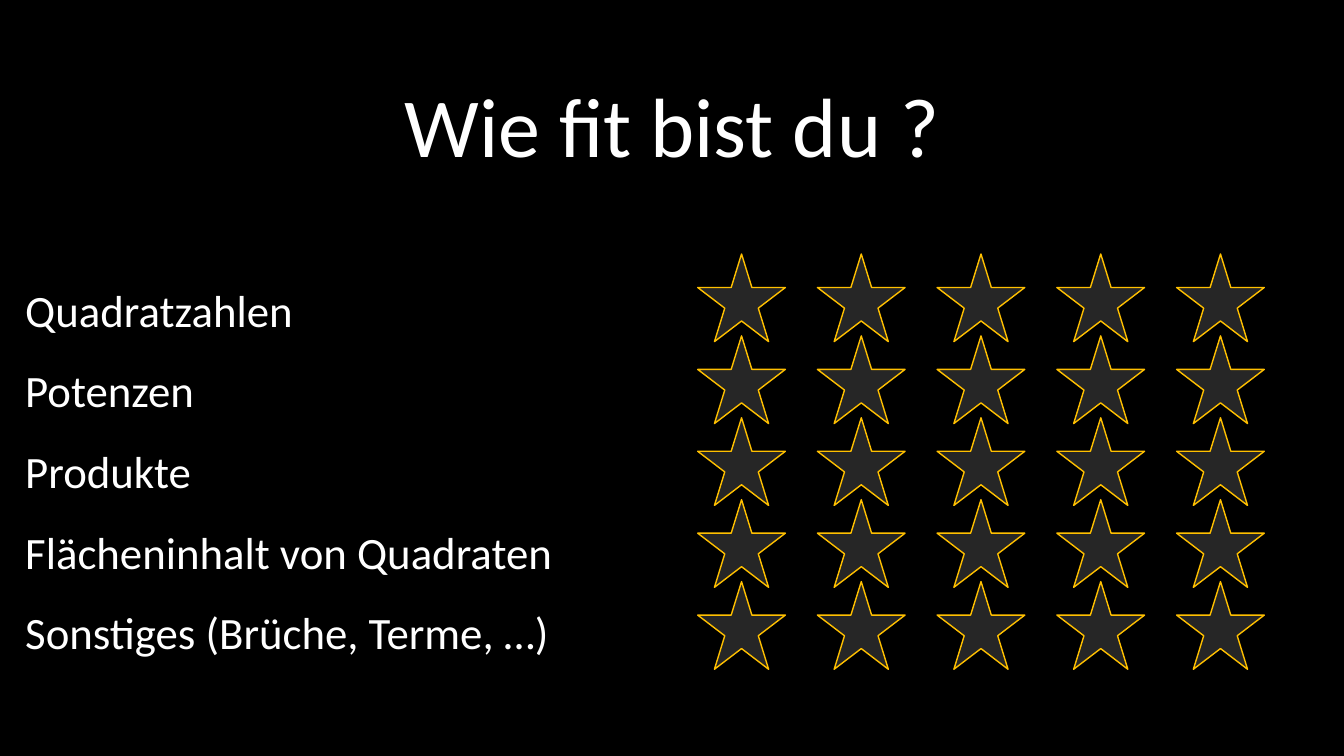
from dataclasses import dataclass

from lxml import etree
from pptx import Presentation
from pptx.dml.color import RGBColor
from pptx.enum.shapes import MSO_SHAPE
from pptx.enum.text import MSO_ANCHOR, MSO_AUTO_SIZE, PP_ALIGN
from pptx.oxml.ns import qn
from pptx.shapes.placeholder import SlidePlaceholder
from pptx.slide import Slide
from pptx.util import Inches, Pt

STAR = MSO_SHAPE.STAR_5_POINT
MIDDLE = MSO_ANCHOR.MIDDLE
NO_AUTOFIT = MSO_AUTO_SIZE.NONE
CENTER = PP_ALIGN.CENTER
LEFT = PP_ALIGN.LEFT


@dataclass(frozen=True)
class Theme:
    background: RGBColor = RGBColor(0x00, 0x00, 0x00)
    text: RGBColor = RGBColor(0xFF, 0xFF, 0xFF)
    star_fill: RGBColor = RGBColor(0x26, 0x26, 0x26)
    star_line: RGBColor = RGBColor(0xFF, 0xC0, 0x00)
    font: str = "Calibri"
    title_size: int = 60
    topic_size: int = 32
    star_line_width: int = 1


@dataclass(frozen=True)
class Box:
    left: float
    top: float
    width: float
    height: float


@dataclass(frozen=True)
class TextStyle:
    size: int
    align: PP_ALIGN
    line_spacing: float


@dataclass(frozen=True)
class StarGrid:
    left: float
    top: float
    column_step: float
    row_step: float
    size: float
    columns: int


THEME = Theme()
TITLE_BOX = Box(0.15, 0.79, 13.03, 1.0)
TOPIC_BOX = Box(0.15, 2.5, 6.5, 4.07)
TITLE_STYLE = TextStyle(THEME.title_size, CENTER, 0.9)
TOPIC_STYLE = TextStyle(THEME.topic_size, LEFT, 1.5)
TITLE = "Wie fit bist du ?"
TOPICS = [
    "Quadratzahlen",
    "Potenzen",
    "Produkte",
    "Flächeninhalt von Quadraten",
    "Sonstiges (Brüche, Terme, …)",
]
STARS = StarGrid(6.92, 2.52, (11.67 - 6.92) / 4, (5.77 - 2.52) / 4, 0.87, 5)


def apply(target: object, values: dict[str, object]) -> None:
    for name, value in values.items():
        setattr(target, name, value)


def write_text(
    holder: SlidePlaceholder, box: Box, lines: list[str], style: TextStyle
) -> None:
    apply(holder, {
        "left": Inches(box.left),
        "top": Inches(box.top),
        "width": Inches(box.width),
        "height": Inches(box.height),
    })
    frame = holder.text_frame
    apply(frame, {
        "text": "\n".join(lines),
        "word_wrap": True,
        "auto_size": NO_AUTOFIT,
        "vertical_anchor": MIDDLE,
        "margin_left": Inches(0.1),
        "margin_right": Inches(0.1),
        "margin_top": 0,
        "margin_bottom": 0,
    })
    for para in frame.paragraphs:
        properties = para._p.get_or_add_pPr()
        properties.set("marL", "0")
        properties.set("indent", "0")
        etree.SubElement(properties, qn("a:buNone"))
        apply(para, {
            "alignment": style.align,
            "line_spacing": style.line_spacing,
            "space_before": Pt(0),
            "space_after": Pt(0),
        })
        for span in para.runs:
            apply(span.font, {"name": THEME.font, "size": Pt(style.size)})
            span.font.color.rgb = THEME.text


def draw_star_row(page: Slide, grid: StarGrid, row: int) -> None:
    group = page.shapes.add_group_shape()
    for column in range(grid.columns):
        star = group.shapes.add_shape(
            STAR,
            Inches(grid.left + column * grid.column_step),
            Inches(grid.top + row * grid.row_step),
            Inches(grid.size),
            Inches(grid.size),
        )
        star.shadow.inherit = False
        star.fill.solid()
        star.fill.fore_color.rgb = THEME.star_fill
        star.line.color.rgb = THEME.star_line
        star.line.width = Pt(THEME.star_line_width)


def main() -> None:
    deck = Presentation()
    apply(deck, {"slide_width": Inches(13.33), "slide_height": Inches(7.5)})
    page = deck.slides.add_slide(deck.slide_layouts[1])
    page.background.fill.solid()
    page.background.fill.fore_color.rgb = THEME.background
    write_text(page.shapes.title, TITLE_BOX, [TITLE], TITLE_STYLE)
    write_text(page.placeholders[1], TOPIC_BOX, TOPICS, TOPIC_STYLE)
    for row in range(len(TOPICS)):
        draw_star_row(page, STARS, row)
    deck.save("out.pptx")


if __name__ == "__main__":
    main()
